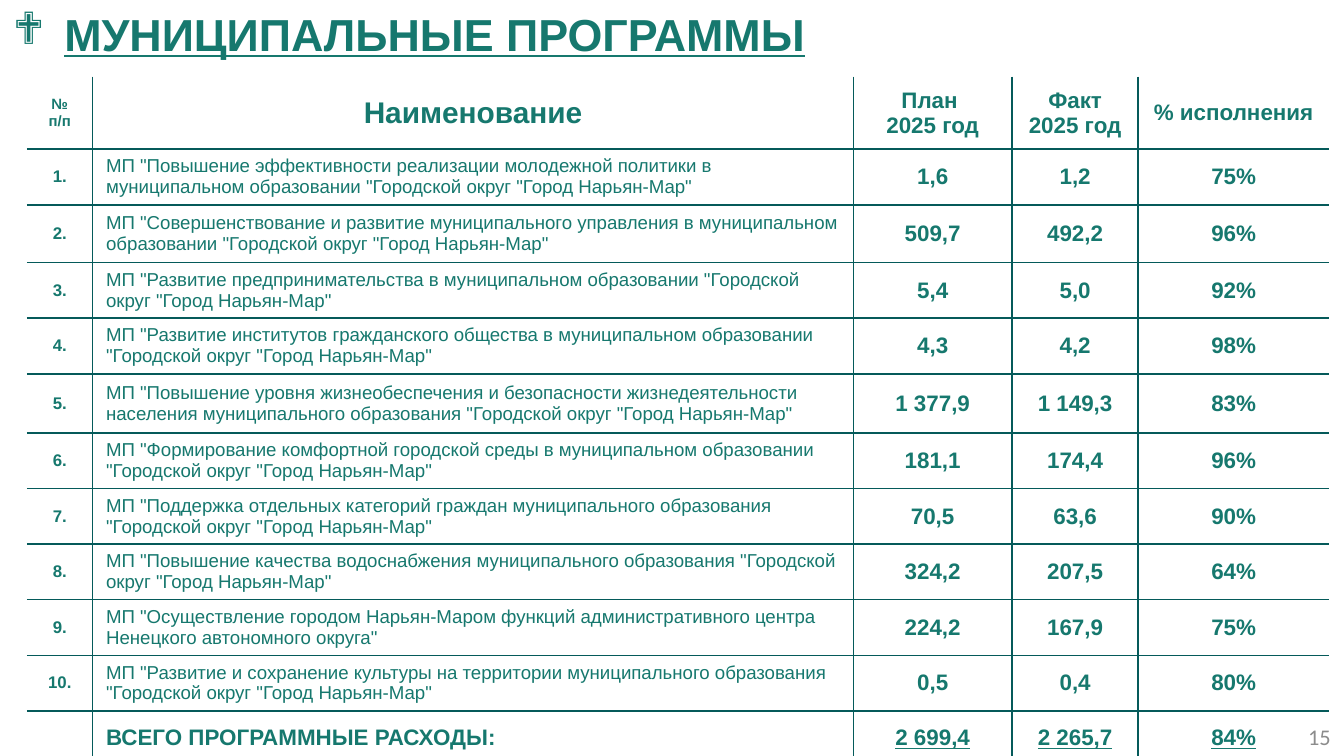
from lxml.etree import SubElement
from pptx import Presentation
from pptx.dml.color import RGBColor
from pptx.enum.text import MSO_ANCHOR, MSO_AUTO_SIZE, PP_ALIGN
from pptx.oxml.ns import qn
from pptx.util import Inches, Pt

GREEN, EDGE, GRAY = "16786E", "055A5A", "8C8C8C"
COLS = [0.49, 5.66, 1.18, 0.94, 1.42]
ROWS = [0.54, 0.36, 0.43, 0.31, 0.38, 0.44, 0.31, 0.38, 0.36, 0.27, 0.34, 0.4]
HEAD = ["№ п/п", "Наименование", "План \n2025 год", "Факт 2025 год", "% исполнения"]
CITY = '"Городской округ "Город Нарьян-Мар"'
PLANS = [
    (f'Повышение эффективности реализации молодежной политики в муниципальном образовании {CITY}', "1,6", "1,2", "75%"),
    (f'Совершенствование и развитие муниципального управления в муниципальном образовании {CITY}', "509,7", "492,2", "96%"),
    (f'Развитие предпринимательства в муниципальном образовании {CITY}', "5,4", "5,0", "92%"),
    (f'Развитие институтов гражданского общества в муниципальном образовании {CITY}', "4,3", "4,2", "98%"),
    (f'Повышение уровня жизнеобеспечения и безопасности жизнедеятельности населения муниципального образования {CITY}',
     "1 377,9", "1 149,3", "83%"),
    (f'Формирование комфортной городской среды в муниципальном образовании {CITY}', "181,1", "174,4", "96%"),
    (f'Поддержка отдельных категорий граждан муниципального образования {CITY}', "70,5", "63,6", "90%"),
    (f'Повышение качества водоснабжения муниципального образования {CITY}', "324,2", "207,5", "64%"),
    ('Осуществление городом Нарьян-Маром функций административного центра Ненецкого автономного округа"',
     "224,2", "167,9", "75%"),
    (f'Развитие и сохранение культуры на территории муниципального образования {CITY}', "0,5", "0,4", "80%"),
]
TOTAL = ["", "ВСЕГО ПРОГРАММНЫЕ РАСХОДЫ:", "2 699,4", "2 265,7", "84%"]


def paint(color):
    """Turn a hex string into a colour."""
    return RGBColor.from_string(color)


def write(para, text, size, color=GREEN, face="Arial", bold=True, under=None):
    """Add one styled run to a paragraph."""
    run = para.add_run()
    run.text = text
    font = run.font
    font.size, font.name, font.bold, font.underline = Pt(size), face, bold, under
    font.color.rgb = paint(color)


def add_box(slide, left, top, width, height):
    """Add a wrapping text box and return its frame."""
    frame = slide.shapes.add_textbox(*map(Inches, (left, top, width, height))).text_frame
    frame.word_wrap = True
    return frame


def add_title(slide):
    """Add the underlined heading with its bullet."""
    frame = add_box(slide, 0, 0, 7.32, 0.5)
    frame.auto_size = MSO_AUTO_SIZE.SHAPE_TO_FIT_TEXT
    para = frame.paragraphs[0]
    props = para._p.get_or_add_pPr()
    props.set("marL", str(Inches(0.38)))
    props.set("indent", str(-Inches(0.38)))
    SubElement(props, qn("a:buFont"), typeface="Wingdings", charset="2")
    SubElement(props, qn("a:buChar"), char="❖")
    write(para, "МУНИЦИПАЛЬНЫЕ ПРОГРАММЫ", 24, under=True)


def add_number(slide):
    """Add the slide number."""
    frame = add_box(slide, 7.67, 5.33, 2.33, 0.3)
    frame.vertical_anchor = MSO_ANCHOR.MIDDLE
    para = frame.paragraphs[0]
    para.alignment = PP_ALIGN.RIGHT
    write(para, "15", 12, GRAY, "Calibri", False)


def rule_cell(cell, sides):
    """Draw the named sides of a cell and clear the others."""
    props = cell._tc.get_or_add_tcPr()
    for side in "LRTB":
        line = SubElement(props, qn(f"a:ln{side}"), w=str(Pt(1)))
        if side in sides:
            fill = SubElement(line, qn("a:solidFill"))
            SubElement(fill, qn("a:srgbClr"), val=EDGE)
        else:
            SubElement(line, qn("a:noFill"))


def fill_cell(cell, text, size, align, bold=True, under=None):
    """Write the text of a cell, one paragraph a line."""
    cell.vertical_anchor = MSO_ANCHOR.MIDDLE
    cell.margin_left = cell.margin_right = Inches(0.1)
    cell.margin_top = cell.margin_bottom = Inches(0.04)
    cell.fill.background()
    frame = cell.text_frame
    for num, line in enumerate(text.split("\n")):
        para = frame.add_paragraph() if num else frame.paragraphs[0]
        para.alignment = align
        if line:
            write(para, line, size, bold=bold, under=under)


def add_grid(slide):
    """Add the table of programmes."""
    body = [[f"{num}.", f'МП "{name}', *vals] for num, (name, *vals) in enumerate(PLANS, 1)]
    rows = [HEAD, *body, TOTAL]
    last, end = len(rows) - 1, len(COLS) - 1
    size = map(Inches, (0.2, 0.57, 9.69, 5.08))
    shape = slide.shapes.add_table(len(rows), len(COLS), *size)
    table = shape.table
    table.first_row = table.horz_banding = False
    for col, width in zip(table.columns, COLS):
        col.width = Inches(width)
    for r, (row, texts) in enumerate(zip(table.rows, rows)):
        row.height = Inches(ROWS[r])
        sizes = [8, 16, 12, 12, 12] if r == 0 else [9, 12 if r == last else 10, 12, 12, 12]
        for c, text in enumerate(texts):
            cell = table.cell(r, c)
            shown = (("L", c > 0), ("R", c < end), ("T", r > 0), ("B", r < last))
            rule_cell(cell, [side for side, on in shown if on])
            align = PP_ALIGN.LEFT if c == 1 and r else PP_ALIGN.CENTER
            bold = c != 1 or r in (0, last)
            fill_cell(cell, text, sizes[c], align, bold, True if r == last and c > 1 else None)
    shape.height = Inches(5.08)


def main():
    """Build and save the slide."""
    deck = Presentation()
    deck.slide_width = Inches(10)
    deck.slide_height = deck.slide_width * 9 // 16
    slide = deck.slides.add_slide(deck.slide_layouts[6])
    add_title(slide)
    add_grid(slide)
    add_number(slide)
    deck.save("out.pptx")


if __name__ == "__main__":
    main()
